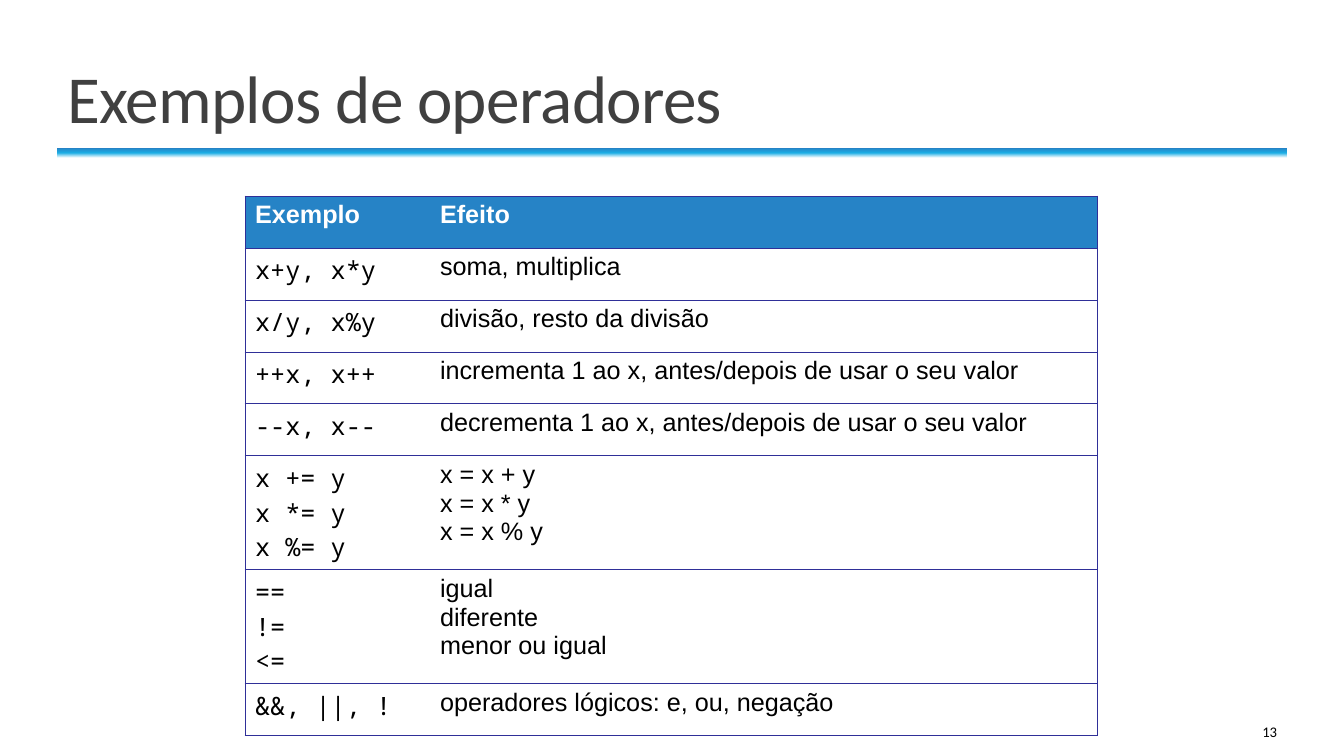
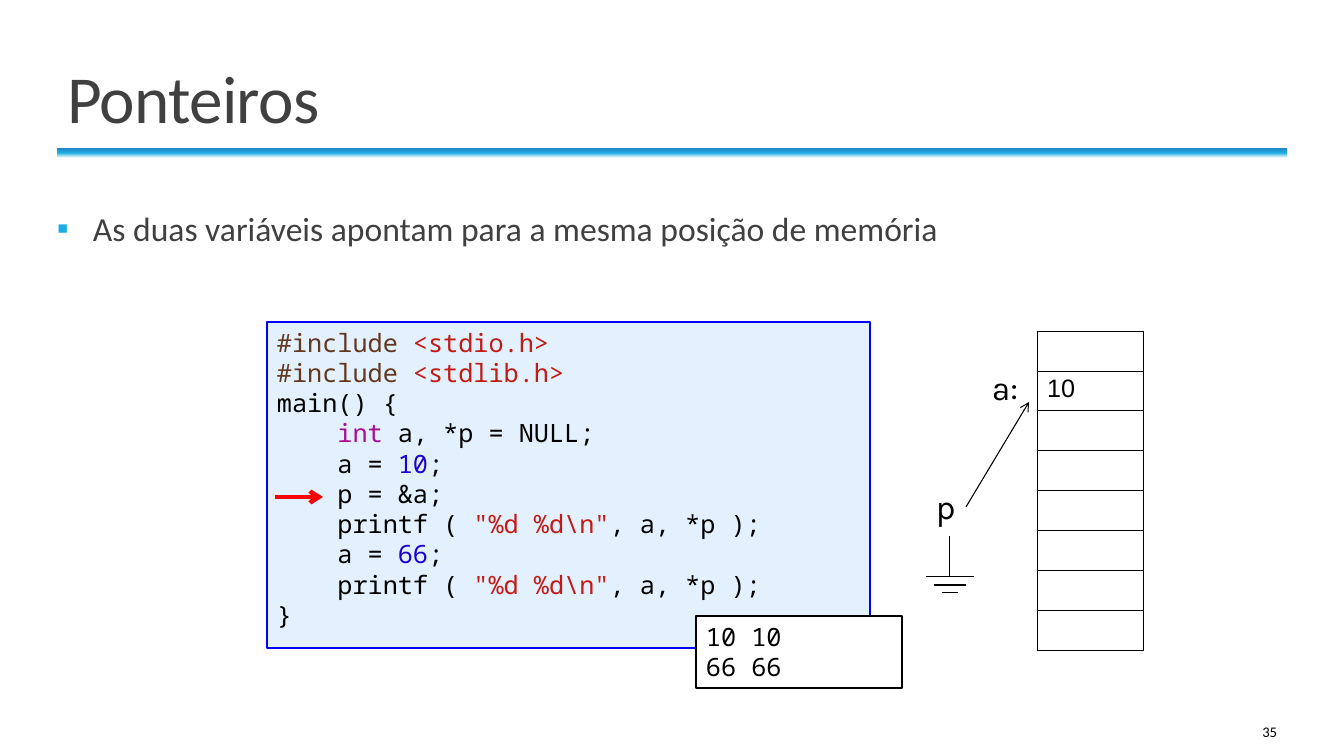
from dataclasses import dataclass

from pptx import Presentation
from pptx.dml.color import RGBColor as RGB
from pptx.enum.shapes import MSO_CONNECTOR as CONN, MSO_SHAPE as SHAPE
from pptx.enum.text import MSO_ANCHOR as ANCHOR, MSO_AUTO_SIZE as FIT, PP_ALIGN as ALIGN
from pptx.oxml import parse_xml
from pptx.oxml.ns import nsdecls, qn
from pptx.util import Emu, Pt


@dataclass(frozen=True)
class Theme:
    white: str = "FFFFFF"
    black: str = "000000"
    heading: str = "404040"
    accent: str = "2683C6"
    cyan: str = "1CADE4"
    grid: str = "2F2F98"
    code_fill: str = "E2F1FD"
    code_line: str = "0000FF"
    directive: str = "643820"
    string: str = "C41A16"
    keyword: str = "AA0D91"
    number: str = "1C00CF"
    red: str = "FF0000"
    title_size: int = 48
    body_size: int = 24
    text_size: int = 18
    footer_size: float = 10.5
    sans: str = "Calibri"
    cell: str = "Arial"
    mono: str = "Noto Sans Mono"
    label: str = "Karla"


T = Theme()
PX = 914400 / 100.8


def px(*values):
    return [Emu(round(v * PX)) for v in values]


def write(tf, lines, font, size, color=T.black, bold=False, para=None):
    """Fill a text frame; a line is a string or a list of (text, colour) runs."""
    for i, line in enumerate(lines):
        p = tf.add_paragraph() if i else tf.paragraphs[0]
        for name, value in (para or {}).items():
            setattr(p, name, value)
        for text, run_color in [(line, color)] if isinstance(line, str) else line:
            r = p.add_run()
            r.text = text
            for name, value in {"name": font, "size": Pt(size), "bold": bold}.items():
                setattr(r.font, name, value)
            r.font.color.rgb = RGB.from_string(run_color)


prs = Presentation()
prs.slide_width, prs.slide_height = px(1344, 756)

# Shared frame: band, page number and title
slides = []
for title, page, layout in [("Exemplos de operadores", "13", 5), ("Ponteiros", "35", 1)]:
    s = prs.slides.add_slide(prs.slide_layouts[layout])
    slides.append(s)

    band = s.shapes.add_shape(SHAPE.RECTANGLE, *px(57, 148, 1230, 10))
    band.shadow.inherit = False
    band.line.fill.background()
    stops = "".join(f'<a:gs pos="{pos}000"><a:srgbClr val="{c}"/></a:gs>'
                    for pos, c in [(0, T.white), (50, T.cyan), (100, T.accent)])
    band.element.spPr.insert(2, parse_xml(
        f'<a:gradFill {nsdecls("a")} rotWithShape="1"><a:gsLst>{stops}</a:gsLst>'
        '<a:lin ang="16200000" scaled="0"/></a:gradFill>'))

    tf = s.shapes.add_textbox(*px(1092, 712, 195, 40)).text_frame
    tf.word_wrap = True
    tf.vertical_anchor = ANCHOR.MIDDLE
    write(tf, [page], T.sans, T.footer_size, para={"alignment": ALIGN.RIGHT})

    sp = s.shapes.title
    sp.left, sp.top, sp.width, sp.height = px(57, 29, 1230, 113)
    tf = sp.text_frame
    tf.auto_size = FIT.NONE
    tf.vertical_anchor = ANCHOR.BOTTOM
    write(tf, [title], T.sans, T.title_size, T.heading,
          para={"alignment": ALIGN.LEFT, "line_spacing": 0.85})
    tf.paragraphs[0].runs[0].font._element.set("spc", "-50")

operators, pointers = slides

# Unstyled tables, ruled around every row and around the outside
rows = [
    (["Exemplo"], ["Efeito"]),
    (["x+y, x*y"], ["soma, multiplica"]),
    (["x/y, x%y"], ["divisão, resto da divisão"]),
    (["++x, x++"], ["incrementa 1 ao x, antes/depois de usar o seu valor"]),
    (["--x, x--"], ["decrementa 1 ao x, antes/depois de usar o seu valor"]),
    (["x += y", "x *= y", "x %= y"], ["x = x + y", "x = x * y", "x = x % y"]),
    (["==", "!=", "<="], ["igual", "diferente", "menor ou igual"]),
    (["&&, ||, !"], ["operadores lógicos: e, ou, negação"]),
]
operator_heights = [52 if len(example) == 1 else 114 for example, _ in rows]
tables = []
for s, x, y, widths, heights, color in [
    (operators, 245, 196, [185, 668], operator_heights, T.grid),
    (pointers, 1037, 331, [106], [40] * 8, T.black),
]:
    gf = s.shapes.add_table(len(heights), len(widths), *px(x, y, sum(widths), sum(heights)))
    tbl = gf.table
    tables.append(tbl)
    tbl.first_row = tbl.horz_banding = False
    gf.element.find(".//" + qn("a:tableStyleId")).text = "{2D5ABB26-0587-4C30-8999-92F81FD0307C}"
    for col, width in zip(tbl.columns, px(*widths)):
        col.width = width
    for row, height in zip(tbl.rows, px(*heights)):
        row.height = height
        for j, cell in enumerate(row.cells):
            left = ["L"] if j == 0 else []
            right = ["R"] if j == len(widths) - 1 else []
            tcPr = cell._tc.get_or_add_tcPr()
            for side in left + right + ["T", "B"]:
                tcPr.append(parse_xml(
                    f'<a:ln{side} {nsdecls("a")} w="{Pt(0.75)}"><a:solidFill>'
                    f'<a:srgbClr val="{color}"/></a:solidFill></a:ln{side}>'))
            cell.fill.solid()
            cell.fill.fore_color.rgb = RGB.from_string(T.white)
operator_table, memory = tables

for i, row in enumerate(rows):
    header = i == 0
    for j, lines in enumerate(row):
        cell = operator_table.cell(i, j)
        if header:
            cell.fill.fore_color.rgb = RGB.from_string(T.accent)
        write(cell.text_frame, lines, T.cell if header or j else T.mono, T.text_size,
              T.white if header else T.black, header)

for row in memory.rows:
    row.cells[0].margin_top, row.cells[0].margin_bottom = px(4, 4)
write(memory.cell(1, 0).text_frame, ["10"], T.cell, T.text_size)

# Pointer statement
s = pointers
sp = s.placeholders[1]
sp.left, sp.top, sp.width, sp.height = px(57, 203, 1230, 486)
tf = sp.text_frame
tf.auto_size = FIT.NONE
tf.margin_left = tf.margin_right = 0
write(tf, ["As duas variáveis apontam para a mesma posição de memória"],
      T.sans, T.body_size, T.heading, para={"space_before": Pt(12), "space_after": Pt(2)})
pPr = tf.paragraphs[0]._p.get_or_add_pPr()
indent, = px(36)
pPr.set("marL", str(indent))
pPr.set("indent", str(-indent))
for bullet in (f'<a:buClr {nsdecls("a")}><a:srgbClr val="{T.cyan}"/></a:buClr>',
               f'<a:buFont {nsdecls("a")} typeface="{T.cell}"/>',
               f'<a:buChar {nsdecls("a")} char="▪"/>'):
    pPr.append(parse_xml(bullet))

# Program and its output
print_line = [("    printf ( ", T.black), ('"%d %d\\n"', T.string), (", a, *p );", T.black)]
program = [
    [("#include ", T.directive), ("<stdio.h>", T.string)],
    [("#include ", T.directive), ("<stdlib.h>", T.string)],
    "main() {",
    [("    ", T.black), ("int", T.keyword), (" a, *p = NULL;", T.black)],
    [("    a = ", T.black), ("10", T.number), (";", T.black)],
    "    p = &a;",
    print_line,
    [("    a = ", T.black), ("66", T.number), (";", T.black)],
    print_line,
    "}",
]
for box, fill, line, lines in [
    ((267, 322, 603, 326), T.code_fill, T.code_line, program),
    ((696, 616, 206, 72), T.white, T.black, ["10 10", "66 66"]),
]:
    sp = s.shapes.add_shape(SHAPE.RECTANGLE, *px(*box))
    sp.shadow.inherit = False
    sp.fill.solid()
    sp.fill.fore_color.rgb = RGB.from_string(fill)
    sp.line.color.rgb = RGB.from_string(line)
    sp.line.width = Pt(1.25)
    sp.text_frame.vertical_anchor = ANCHOR.TOP
    write(sp.text_frame, lines, T.mono, T.text_size,
          para={"alignment": ALIGN.LEFT, "line_spacing": 1.0})

# Variable names
for text, box in [("a:", (982, 362, 50, 51)), ("p", (926, 481, 39, 50))]:
    tf = s.shapes.add_textbox(*px(*box)).text_frame
    tf.word_wrap = False
    write(tf, [text], T.label, T.body_size)

# Ground symbol, pointer and current-line arrow
ground = s.shapes.add_group_shape().shapes
center, ground_top = 950, 577
links = [(ground, (center, 536, center, ground_top), T.black, 0.75, False)]
for i, half in enumerate([24, 16, 8]):
    y = ground_top + 8 * i
    links.append((ground, (center - half, y, center + half, y), T.black, 0.75, False))
links += [
    (s.shapes, (966, 507, 1029, 402), T.black, 0.75, True),
    (s.shapes, (275, 497, 323, 497), T.red, 3, True),
]
for shapes, ends, color, points, arrow in links:
    cx = shapes.add_connector(CONN.STRAIGHT, *px(*ends))
    cx.line.color.rgb = RGB.from_string(color)
    cx.line.width = Pt(points)
    if arrow:
        cx.line._get_or_add_ln().append(parse_xml(f'<a:tailEnd {nsdecls("a")} type="arrow"/>'))
    cx.element.spPr.append(parse_xml(f'<a:effectLst {nsdecls("a")}/>'))

prs.save("out.pptx")
